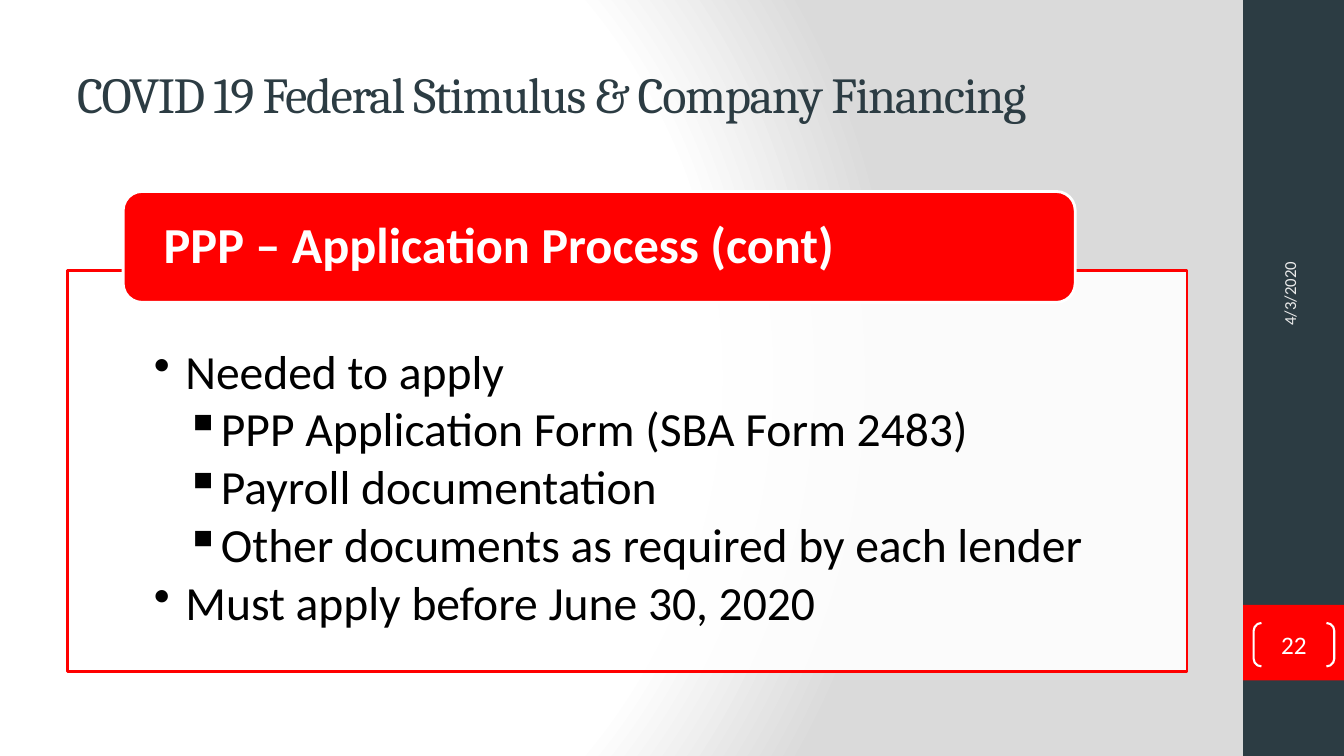
from pptx import Presentation
from pptx.dml.color import RGBColor
from pptx.enum.shapes import MSO_SHAPE
from pptx.enum.text import MSO_ANCHOR, PP_ALIGN
from pptx.oxml import parse_xml
from pptx.oxml.ns import nsdecls, qn
from pptx.util import Pt
from lxml import etree

RECTANGLE = MSO_SHAPE.RECTANGLE
ROUNDED = MSO_SHAPE.ROUNDED_RECTANGLE
BRACKETS = MSO_SHAPE.DOUBLE_BRACKET
TOP, MIDDLE = MSO_ANCHOR.TOP, MSO_ANCHOR.MIDDLE
LEFT, CENTER = PP_ALIGN.LEFT, PP_ALIGN.CENTER

SLATE = RGBColor(0x2C, 0x3C, 0x43)
RED = RGBColor(0xFF, 0x00, 0x00)
WHITE = RGBColor(0xFF, 0xFF, 0xFF)
BLACK = RGBColor(0x00, 0x00, 0x00)
PALE = RGBColor(0xEB, 0xEB, 0xEB)
GRAY = RGBColor(0xDA, 0xDA, 0xDA)

SIDEBAR_LEFT, SIDEBAR_WIDTH = 888, 72
CONTENT_LEFT, CONTENT_WIDTH = 48, 800
INDENT = 22.5
BULLETS = {1: "•", 2: "▪"}
REQUIREMENTS = [
    (1, "Needed to apply"),
    (2, "PPP Application Form (SBA Form 2483)"),
    (2, "Payroll documentation"),
    (2, "Other documents as required by each lender"),
    (1, "Must apply before June 30, 2020"),
]


def apply_format(target, values):
    for name, value in values.items():
        setattr(target, name, value)


def set_background(slide):
    stops = "".join(
        f'<a:gs pos="{position * 1000}"><a:srgbClr val="{color}"/></a:gs>'
        for position, color in [(0, WHITE), (75, WHITE), (100, GRAY)]
    )
    background = parse_xml(
        f'<p:bg {nsdecls("p", "a")}><p:bgPr><a:gradFill rotWithShape="1">'
        f'<a:gsLst>{stops}</a:gsLst><a:path path="circle">'
        '<a:fillToRect l="20000" t="50000" r="100000" b="50000"/></a:path>'
        '</a:gradFill><a:effectLst/></p:bgPr></p:bg>'
    )
    slide.element.cSld.insert(0, background)


def add_box(slide, kind, bounds, fill=None, line=None, weight=2, corner=None):
    shape = slide.shapes.add_shape(kind, *map(Pt, bounds))
    shape.shadow.inherit = False
    if fill is None:
        shape.fill.background()
    else:
        shape.fill.solid()
        shape.fill.fore_color.rgb = fill
    if line is None:
        shape.line.fill.background()
    else:
        shape.line.color.rgb = line
        shape.line.width = Pt(weight)
    if corner is not None:
        shape.adjustments[0] = corner
    return shape


def set_opacity(shape, percent):
    color = shape.fill._xPr.find(".//" + qn("a:srgbClr"))
    etree.SubElement(color, qn("a:alpha")).set("val", str(percent * 1000))


def set_frame(shape, margins=(7.2, 3.6, 7.2, 3.6), anchor=MIDDLE):
    left, top, right, bottom = map(Pt, margins)
    apply_format(shape.text_frame, {
        "word_wrap": True, "vertical_anchor": anchor,
        "margin_left": left, "margin_top": top,
        "margin_right": right, "margin_bottom": bottom,
    })


def write(paragraph, text, size, color, name="Calibri", bold=False,
          alignment=LEFT):
    paragraph.alignment = alignment
    run = paragraph.add_run()
    run.text = text
    apply_format(run.font, {"size": Pt(size), "name": name, "bold": bold})
    run.font.color.rgb = color
    return run


def add_label(slide, bounds, text, size, color, name="Calibri"):
    box = slide.shapes.add_textbox(*map(Pt, bounds))
    set_frame(box)
    return box, write(box.text_frame.paragraphs[0], text, size, color, name)


def add_bullet(paragraph, level):
    properties = paragraph._p.get_or_add_pPr()
    properties.set("marL", str(Pt(INDENT * level)))
    properties.set("indent", str(-Pt(INDENT)))
    etree.SubElement(properties, qn("a:buChar")).set("char", BULLETS[level])


def add_sidebar(slide):
    add_box(slide, RECTANGLE, (SIDEBAR_LEFT, 0, SIDEBAR_WIDTH, 540), SLATE)
    add_box(slide, RECTANGLE, (SIDEBAR_LEFT, 432, SIDEBAR_WIDTH, 54), RED)
    date, _ = add_label(slide, (825, 124.6, 192, 38), "4/3/2020", 12, PALE)
    date.rotation = 270
    number = add_box(slide, BRACKETS, (895.5, 445, 57.6, 31), line=WHITE,
                     weight=1.5, corner=0.18)
    set_frame(number, (0, 0, 0, 0))
    write(number.text_frame.paragraphs[0], "22", 18, WHITE, alignment=CENTER)


def add_title(slide, text):
    bounds = (CONTENT_LEFT, 21.6, CONTENT_WIDTH, 90)
    _, run = add_label(slide, bounds, text, 36, SLATE, "Cambria")
    run._r.get_or_add_rPr().set("spc", "-100")


def add_requirements(slide):
    panel = add_box(slide, RECTANGLE,
                    (CONTENT_LEFT, 193, CONTENT_WIDTH, 286.6), WHITE, RED)
    set_opacity(panel, 90)
    set_frame(panel, (62, 55.5, 62, 18.7), TOP)
    frame = panel.text_frame
    for index, (level, text) in enumerate(REQUIREMENTS):
        paragraph = frame.add_paragraph() if index else frame.paragraphs[0]
        apply_format(paragraph, {
            "level": level, "line_spacing": 0.9, "space_after": Pt(4.6),
        })
        add_bullet(paragraph, level)
        write(paragraph, text, 34, BLACK)


def add_heading(slide, text):
    heading = add_box(slide, ROUNDED, (88, 136.8, 680, 79.2), RED, WHITE,
                      corner=0.17)
    set_frame(heading, (25, 0, 25, 0))
    paragraph = heading.text_frame.paragraphs[0]
    paragraph.line_spacing = 0.9
    write(paragraph, text, 36, WHITE, bold=True)


def main():
    presentation = Presentation()
    presentation.slide_width = Pt(960)
    presentation.slide_height = Pt(540)
    slide = presentation.slides.add_slide(presentation.slide_layouts[6])
    set_background(slide)
    add_sidebar(slide)
    add_title(slide, "COVID 19 Federal Stimulus & Company Financing")
    add_requirements(slide)
    add_heading(slide, "PPP – Application Process (cont)")
    presentation.save("out.pptx")


if __name__ == "__main__":
    main()
